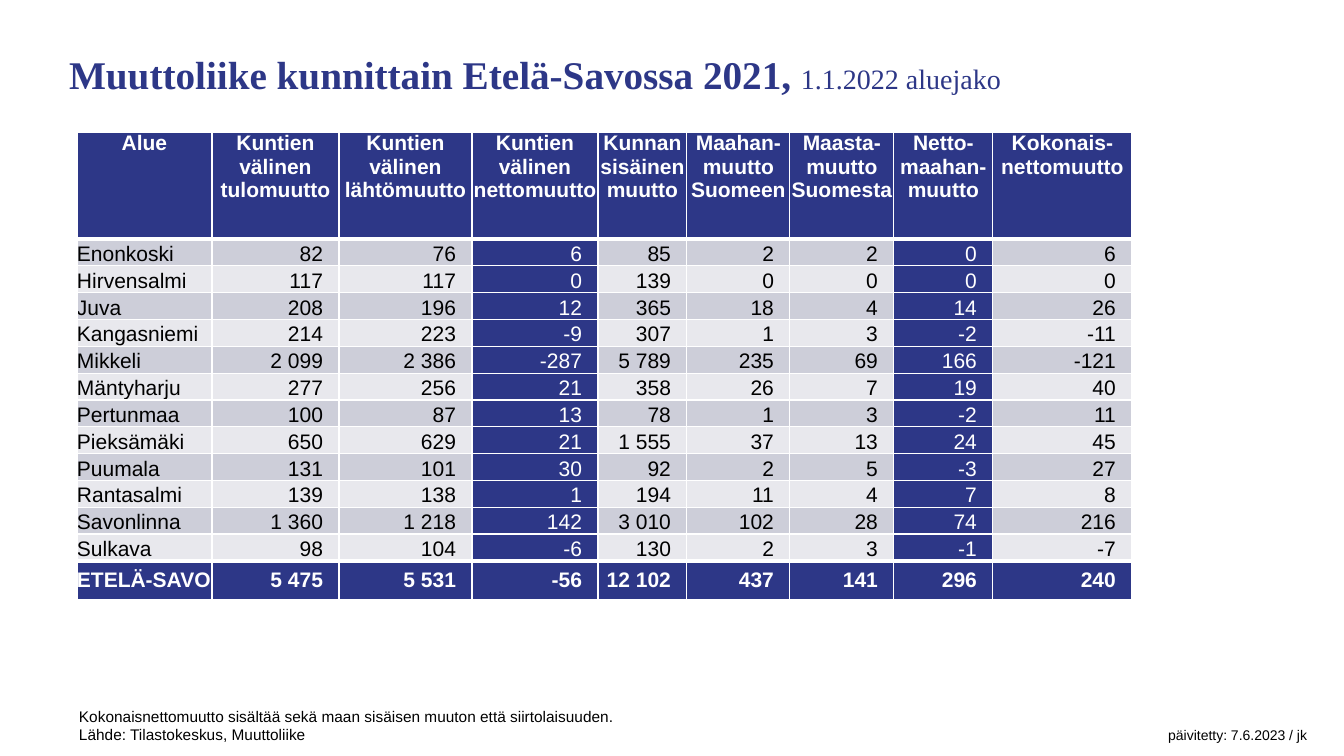
from lxml import etree
from pptx import Presentation
from pptx.dml.color import RGBColor
from pptx.enum.text import MSO_ANCHOR, PP_ALIGN
from pptx.oxml.ns import qn
from pptx.util import Pt

NAVY = RGBColor(0x2D, 0x37, 0x87)
WHITE = RGBColor(0xFF, 0xFF, 0xFF)
BLACK = RGBColor(0x00, 0x00, 0x00)
BAND_DARK = RGBColor(0xCD, 0xCE, 0xD9)
BAND_LIGHT = RGBColor(0xE8, 0xE8, 0xED)
TOP, MIDDLE, BOTTOM = MSO_ANCHOR.TOP, MSO_ANCHOR.MIDDLE, MSO_ANCHOR.BOTTOM
LEFT, CENTER, RIGHT = PP_ALIGN.LEFT, PP_ALIGN.CENTER, PP_ALIGN.RIGHT
SANS, SERIF = "Arial", "Times New Roman"

WIDTH, HEIGHT = 1344, 756
COL_WIDTHS = [135, 127, 133, 126, 89, 103, 104, 99, 139]
HEADER_H, BODY_H, TOTAL_H = 107, 322, 39
NET_COLS = (3, 7)
ROWS = [
    ["Alue", "Kuntien välinen tulomuutto", "Kuntien välinen lähtömuutto",
     "Kuntien välinen nettomuutto", "Kunnan sisäinen muutto",
     "Maahan-muutto Suomeen", "Maasta-muutto Suomesta",
     "Netto-maahan-muutto", "Kokonais-nettomuutto"],
    ["Enonkoski", "82", "76", "6", "85", "2", "2", "0", "6"],
    ["Hirvensalmi", "117", "117", "0", "139", "0", "0", "0", "0"],
    ["Juva", "208", "196", "12", "365", "18", "4", "14", "26"],
    ["Kangasniemi", "214", "223", "-9", "307", "1", "3", "-2", "-11"],
    ["Mikkeli", "2 099", "2 386", "-287", "5 789", "235", "69", "166", "-121"],
    ["Mäntyharju", "277", "256", "21", "358", "26", "7", "19", "40"],
    ["Pertunmaa", "100", "87", "13", "78", "1", "3", "-2", "11"],
    ["Pieksämäki", "650", "629", "21", "1 555", "37", "13", "24", "45"],
    ["Puumala", "131", "101", "30", "92", "2", "5", "-3", "27"],
    ["Rantasalmi", "139", "138", "1", "194", "11", "4", "7", "8"],
    ["Savonlinna", "1 360", "1 218", "142", "3 010", "102", "28", "74", "216"],
    ["Sulkava", "98", "104", "-6", "130", "2", "3", "-1", "-7"],
    ["ETELÄ-SAVO", "5 475", "5 531", "-56", "12 102", "437", "141", "296", "240"],
]


class SlideBuilder:
    """Holds the style and the current slide, and adds its elements."""

    def __init__(self, prs):
        self.scale = 9144000 / 1008
        prs.slide_width, prs.slide_height = self.px(WIDTH), self.px(HEIGHT)
        self.slide = prs.slides.add_slide(prs.slide_layouts[6])

    def px(self, n):
        return round(n * self.scale)

    def run(self, p, text, size, color, name=SANS, bold=False):
        r = p.add_run()
        r.text = text
        for key, value in {"name": name, "size": Pt(size), "bold": bold}.items():
            setattr(r.font, key, value)
        r.font.color.rgb = color

    def tab_stop(self, p, pos):
        tabs = etree.SubElement(p._p.get_or_add_pPr(), qn("a:tabLst"))
        etree.SubElement(tabs, qn("a:tab"), pos=str(self.px(pos)), algn="r")

    def text(self, box, margins, anchor, paragraphs, tab=None):
        sp = self.slide.shapes.add_textbox(*map(self.px, box))
        tf = sp.text_frame
        sides = ("margin_left", "margin_top", "margin_right", "margin_bottom")
        form = dict(zip(sides, map(self.px, margins)))
        form.update(word_wrap=True, vertical_anchor=anchor)
        for key, value in form.items():
            setattr(tf, key, value)
        for i, runs in enumerate(paragraphs):
            p = tf.add_paragraph() if i else tf.paragraphs[0]
            if tab and any("\t" in r[0] for r in runs):
                self.tab_stop(p, tab)
            for r in runs:
                self.run(p, *r)

    def borders(self, cell, top, bottom):
        tc_pr = cell._tc.get_or_add_tcPr()
        widths = {"lnL": 1, "lnR": 1, "lnT": top, "lnB": bottom}
        for i, (side, width) in enumerate(widths.items()):
            ln = etree.Element(qn(f"a:{side}"), w=str(Pt(width)))
            fill = etree.SubElement(ln, qn("a:solidFill"))
            etree.SubElement(fill, qn("a:srgbClr"), val=str(WHITE))
            tc_pr.insert(i, ln)

    def cell(self, cell, text, fill, color, bold, align, anchor):
        form = {"margin_left": 0, "margin_top": 0, "margin_bottom": 0,
                "margin_right": self.px(16 if align == RIGHT else 0),
                "vertical_anchor": anchor}
        for key, value in form.items():
            setattr(cell, key, value)
        cell.fill.solid()
        cell.fill.fore_color.rgb = fill
        p = cell.text_frame.paragraphs[0]
        p.alignment = align
        self.run(p, text, 15, color, bold=bold)

    def table(self, x, y, rows):
        last = len(rows) - 1
        heights = [HEADER_H] + [BODY_H / (last - 1)] * (last - 1) + [TOTAL_H]
        box = (x, y, sum(COL_WIDTHS), sum(heights))
        frame = self.slide.shapes.add_table(len(rows), len(COL_WIDTHS), *map(self.px, box))
        table = frame.table
        table.horz_banding = False
        for col, width in zip(table.columns, COL_WIDTHS):
            col.width = self.px(width)
        for i, (row, height) in enumerate(zip(rows, heights)):
            table.rows[i].height = self.px(height)
            strong = i in (0, last)
            anchor = {0: TOP, last: MIDDLE}.get(i, BOTTOM)
            for j, text in enumerate(row):
                navy = strong or j in NET_COLS
                fill = NAVY if navy else BAND_DARK if i % 2 else BAND_LIGHT
                align = CENTER if i == 0 else RIGHT if j else LEFT
                cell = table.cell(i, j)
                self.cell(cell, text, fill, WHITE if navy else BLACK, strong, align, anchor)
                self.borders(cell, 3 if i in (1, last) else 1, 3 if i in (0, last - 1) else 1)


def main():
    prs = Presentation()
    s = SlideBuilder(prs)
    s.text((69, 44, 1182, 56), (0, 0, 0, 3), BOTTOM, [[
        ("Muuttoliike kunnittain Etelä-Savossa 2021, ", 28, NAVY, SERIF, True),
        ("1.1.2022 aluejako", 20, NAVY, SERIF)]])
    s.text((69, 702, 1262, 49), (10, 5, 10, 5), TOP, [
        [("Kokonaisnettomuutto sisältää sekä maan sisäisen muuton että siirtolaisuuden.",
          11, BLACK)],
        [("Lähde: Tilastokeskus, Muuttoliike\t", 11, BLACK),
         ("päivitetty: 7.6.2023 / jk", 10, BLACK)]], tab=1228)
    s.table(77, 132, ROWS)
    prs.save("out.pptx")


if __name__ == "__main__":
    main()
